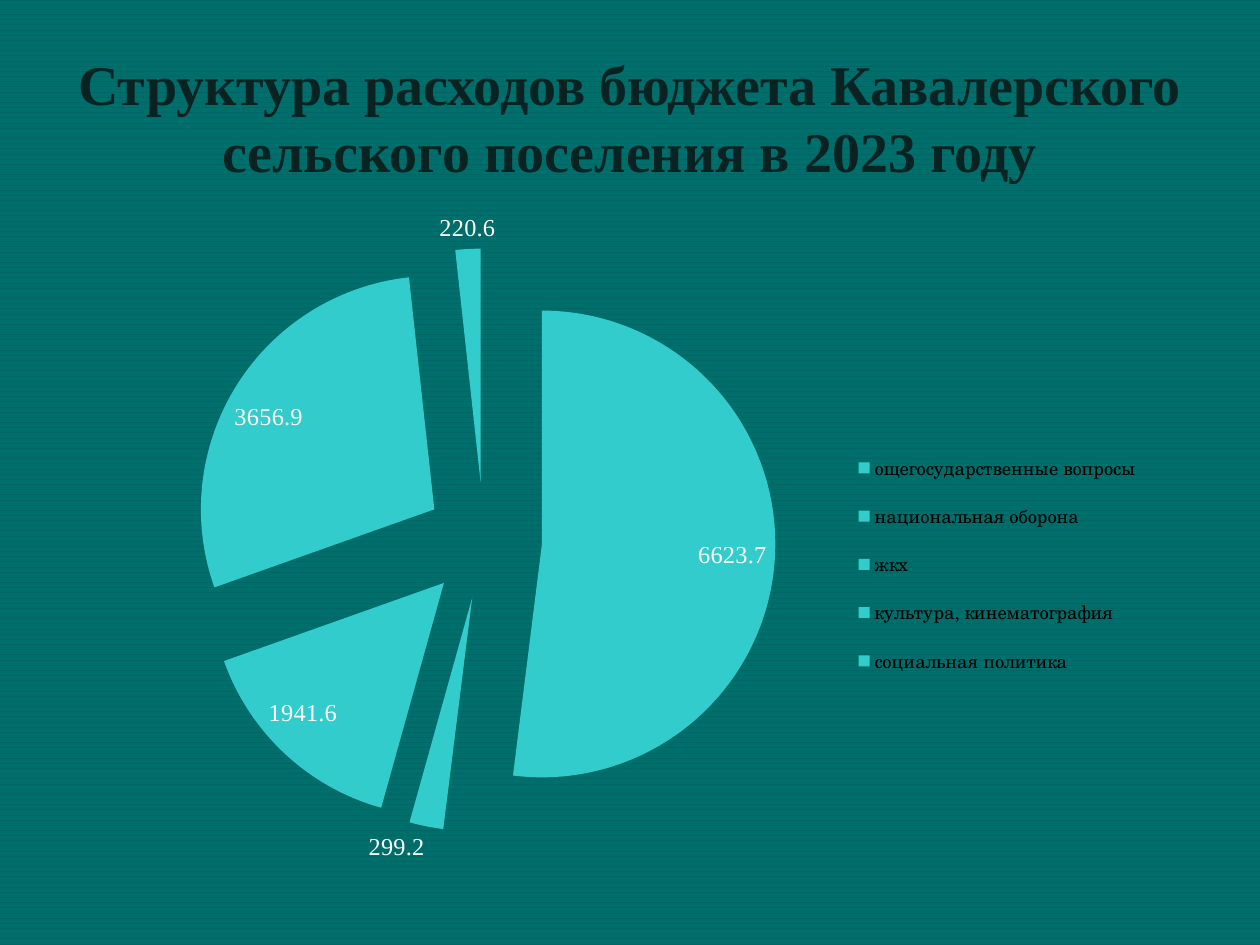
from lxml.etree import SubElement
from pptx import Presentation
from pptx.chart.data import CategoryChartData
from pptx.dml.color import RGBColor
from pptx.enum.chart import XL_CHART_TYPE, XL_LABEL_POSITION, XL_LEGEND_POSITION
from pptx.enum.dml import MSO_PATTERN
from pptx.enum.text import MSO_ANCHOR, PP_ALIGN
from pptx.oxml.ns import qn
from pptx.util import Pt

PX = 914400 // 126
SERIF = "Times New Roman"
HUES = {"stripe": "006E6B", "back": "006666", "title": "082322",
        "slice": "33CCCC", "label": "FFFFFF", "legend": "000000"}
COSTS = {"ощегосударственные вопросы": 6623.7,
         "национальная оборона": 299.2,
         "жкх": 1941.6,
         "культура, кинематография": 3656.9,
         "социальная политика": 220.6}


def hue(name):
    return RGBColor.from_string(HUES[name])


def place(*box):
    return [n * PX for n in box]


def style(font, face, size, tone, bold=False):
    font.name, font.size, font.bold = face, Pt(size), bold
    font.color.rgb = hue(tone)


def paint(slide):
    fill = slide.background.fill
    fill.patterned()
    fill.pattern = MSO_PATTERN.DARK_HORIZONTAL
    fill.fore_color.rgb = hue("stripe")
    fill.back_color.rgb = hue("back")


def head(slide, text):
    title = slide.shapes.title
    title.left, title.top, title.width, title.height = place(63, 38, 1134, 157)
    frame = title.text_frame
    frame.word_wrap = True
    frame.vertical_anchor = MSO_ANCHOR.MIDDLE
    para = frame.paragraphs[0]
    para.alignment = PP_ALIGN.CENTER
    run = para.add_run()
    run.text = text
    style(run.font, SERIF, 32, "title", True)


def fix(layout, inner=False, **frame):
    """Set a manual layout as fractions of the chart."""
    for old in layout.findall(qn("c:manualLayout")):
        layout.remove(old)
    manual = SubElement(layout, qn("c:manualLayout"))
    if inner:
        SubElement(manual, qn("c:layoutTarget")).set("val", "inner")
    for key in ("xMode", "yMode"):
        SubElement(manual, qn("c:" + key)).set("val", "edge")
    for key, value in frame.items():
        SubElement(manual, qn("c:" + key)).set("val", str(value))


def room(part, after):
    """Return the layout element of a chart part, making it if needed."""
    layout = part.find(qn("c:layout"))
    if layout is None:
        layout = SubElement(part, qn("c:layout"))
        if after is None:
            part.insert(0, layout)
        else:
            part.find(qn(after)).addnext(layout)
    return layout


def pie(slide):
    data = CategoryChartData(number_format="0.0")
    data.categories = list(COSTS)
    data.add_series("Series 1", list(COSTS.values()))
    chart = slide.shapes.add_chart(
        XL_CHART_TYPE.PIE, *place(52, 192, 1167, 690), data).chart
    chart.has_title = False
    style(chart.font, SERIF, 13.9, "label")
    plot = chart.plots[0]
    plot.vary_by_categories = True

    # Slices, all pulled apart
    series = plot.series[0]
    for i in range(len(COSTS)):
        point = series.points[i].format
        point.fill.solid()
        point.fill.fore_color.rgb = hue("slice")
        point.line.fill.background()
    burst = series._element.makeelement(qn("c:explosion"), {"val": "25"})
    series._element.find(qn("c:dPt")).addprevious(burst)

    # Value labels
    labels = series.data_labels
    labels.show_value = True
    labels.show_percentage = False
    labels.number_format = "0.0"
    labels.number_format_is_linked = False
    labels.position = XL_LABEL_POSITION.BEST_FIT
    style(labels.font, SERIF, 13.9, "label")

    # Legend
    chart.has_legend = True
    legend = chart.legend
    legend.position = XL_LEGEND_POSITION.RIGHT
    legend.include_in_layout = False
    style(legend.font, "TeX Gyre Schola", 10.6, "legend")

    fix(room(legend._element, "c:legendPos"), x=0.67, y=0.35, w=0.28, h=0.38)
    area = chart._chartSpace.chart.plotArea
    fix(room(area, None), True, x=0.12, y=0.08, w=0.5, h=0.85)


def main():
    deck = Presentation()
    deck.slide_width, deck.slide_height = place(1260, 945)
    slide = deck.slides.add_slide(deck.slide_layouts[5])
    paint(slide)
    head(slide, "Структура расходов бюджета Кавалерского "
                "сельского поселения в 2023 году")
    pie(slide)
    deck.save("out.pptx")


if __name__ == "__main__":
    main()
